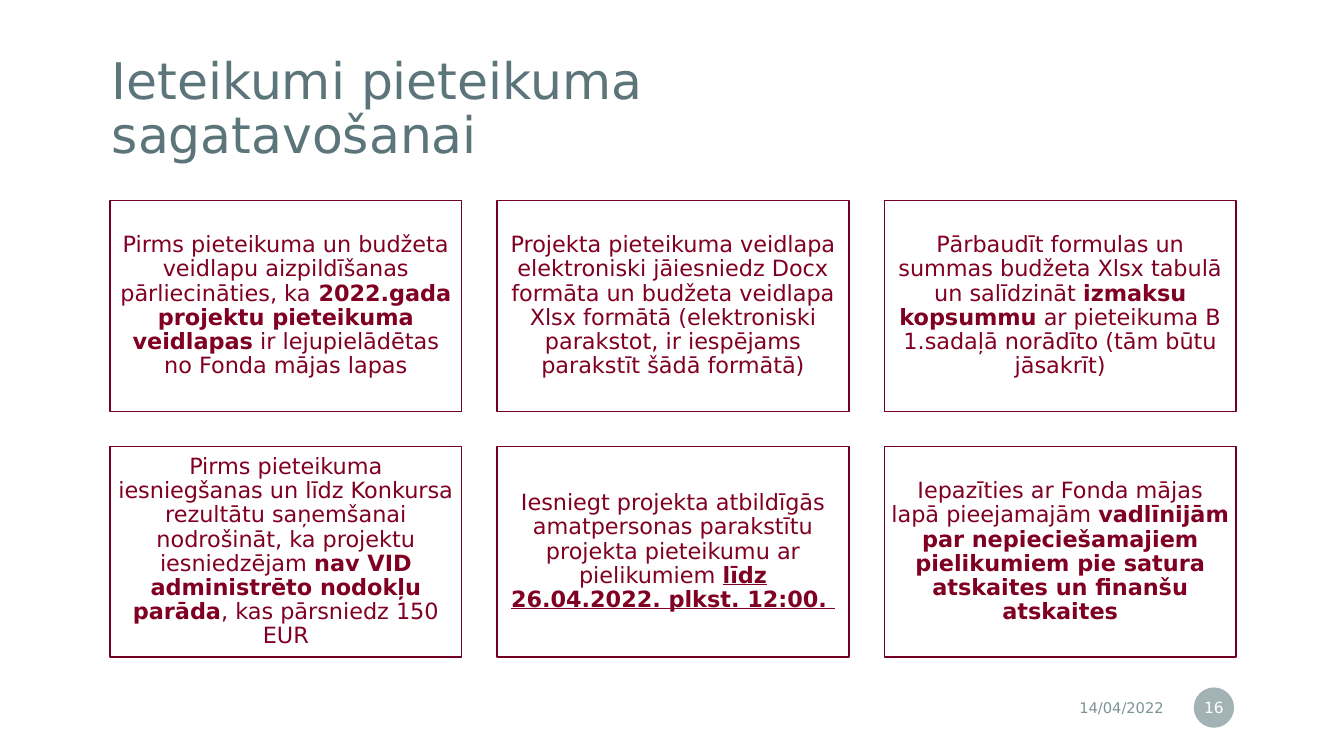
from pptx import Presentation
from pptx.dml.color import RGBColor as Rgb
from pptx.enum.shapes import MSO_SHAPE as Form
from pptx.enum.text import MSO_ANCHOR as Anchor, PP_ALIGN as Align
from pptx.oxml.ns import qn
from pptx.util import Inches, Pt
from lxml.etree import SubElement

FONT = "DejaVu Sans"
INK = {
    "title": "5B757A",
    "grey": "7C9396",
    "white": "FFFFFF",
    "edge": "740021",
    "wine": "800024",
}
COLS = 3
LEFT, TOP = 1.09, 1.99
WIDE, HIGH = 3.49, 2.09
GAP = 0.35

# Each card is a list of (text, style); in a style, b is bold and u underlined.
CARDS = [
    [("Pirms pieteikuma un budžeta veidlapu aizpildīšanas pārliecināties, ka", ""),
     (" 2022.gada projektu pieteikuma veidlapas", "b"),
     (" ir lejupielādētas no Fonda mājas lapas", "")],
    [("Projekta pieteikuma veidlapa elektroniski jāiesniedz Docx formāta un "
      "budžeta veidlapa Xlsx formātā (elektroniski parakstot, ir iespējams "
      "parakstīt šādā formātā)", "")],
    [("Pārbaudīt formulas un summas budžeta Xlsx tabulā un salīdzināt ", ""),
     ("izmaksu kopsummu", "b"),
     (" ar pieteikuma B 1.sadaļā norādīto (tām būtu jāsakrīt)", "")],
    [("Pirms pieteikuma iesniegšanas un līdz Konkursa rezultātu saņemšanai "
      "nodrošināt, ka projektu iesniedzējam ", ""),
     ("nav VID administrēto nodokļu parāda", "b"),
     (", kas pārsniedz 150 EUR", "")],
    [("Iesniegt projekta atbildīgās amatpersonas parakstītu projekta "
      "pieteikumu ar pielikumiem ", ""),
     ("līdz 26.04.2022. plkst. 12:00. ", "bu")],
    [("Iepazīties ar Fonda mājas lapā pieejamajām ", ""),
     ("vadlīnijām par nepieciešamajiem pielikumiem pie satura atskaites un "
      "finanšu atskaites", "b")],
]


def color(name):
    return Rgb.from_string(INK[name])


def write(shape, parts, size, ink, align, pad, lines=1.0):
    """Fill a shape with one paragraph of styled runs; pad is (side, end)."""
    frame = shape.text_frame
    frame.word_wrap = True
    frame.vertical_anchor = Anchor.MIDDLE
    frame.margin_left = frame.margin_right = Inches(pad[0])
    frame.margin_top = frame.margin_bottom = Inches(pad[1])
    para = frame.paragraphs[0]
    para.alignment = align
    para.line_spacing = lines
    for text, style in parts:
        run = para.add_run()
        run.text = text
        font = run.font
        font.name, font.size = FONT, Pt(size)
        font.bold, font.underline = "b" in style, "u" in style
        font.color.rgb = color(ink)


def add_text(slide, box, text, size, ink, align, pad, lines=1.0):
    shape = slide.shapes.add_textbox(*map(Inches, box))
    write(shape, [(text, "")], size, ink, align, pad, lines)


def add_form(slide, form, box, fill):
    shape = slide.shapes.add_shape(form, *map(Inches, box))
    shape.shadow.inherit = False
    shape.fill.solid()
    shape.fill.fore_color.rgb = color(fill)
    shape.line.fill.background()
    return shape


def add_card(slide, spot, parts):
    row, col = divmod(spot, COLS)
    box = (LEFT + col * (WIDE + GAP), TOP + row * (HIGH + GAP), WIDE, HIGH)
    card = add_form(slide, Form.RECTANGLE, box, "white")
    card.line.color.rgb = color("edge")
    card.line.width = Pt(1)
    write(card, parts, 16, "wine", Align.CENTER, (0.07, 0.07), 0.9)


def add_badge(slide, box, text):
    badge = add_form(slide, Form.OVAL, box, "grey")
    tint = badge.element.spPr.find(qn("a:solidFill"))[0]
    SubElement(tint, qn("a:alpha")).set("val", "70000")
    write(badge, [(text, "")], 11, "white", Align.CENTER, (0.02, 0.05))


def main():
    deck = Presentation()
    deck.slide_width, deck.slide_height = Inches(13.33), Inches(7.5)
    slide = deck.slides.add_slide(deck.slide_layouts[6])
    add_text(slide, (0.91, 0.48, 8.73, 1.23), "Ieteikumi pieteikuma sagatavošanai",
             36, "title", Align.LEFT, (0.2, 0.2), 0.9)
    for spot, parts in enumerate(CARDS):
        add_card(slide, spot, parts)
    add_text(slide, (8.63, 6.84, 3.01, 0.35), "14/04/2022",
             10.5, "grey", Align.RIGHT, (0.1, 0.05))
    add_badge(slide, (11.84, 6.82, 0.4, 0.4), "16")
    deck.save("out.pptx")


if __name__ == "__main__":
    main()
